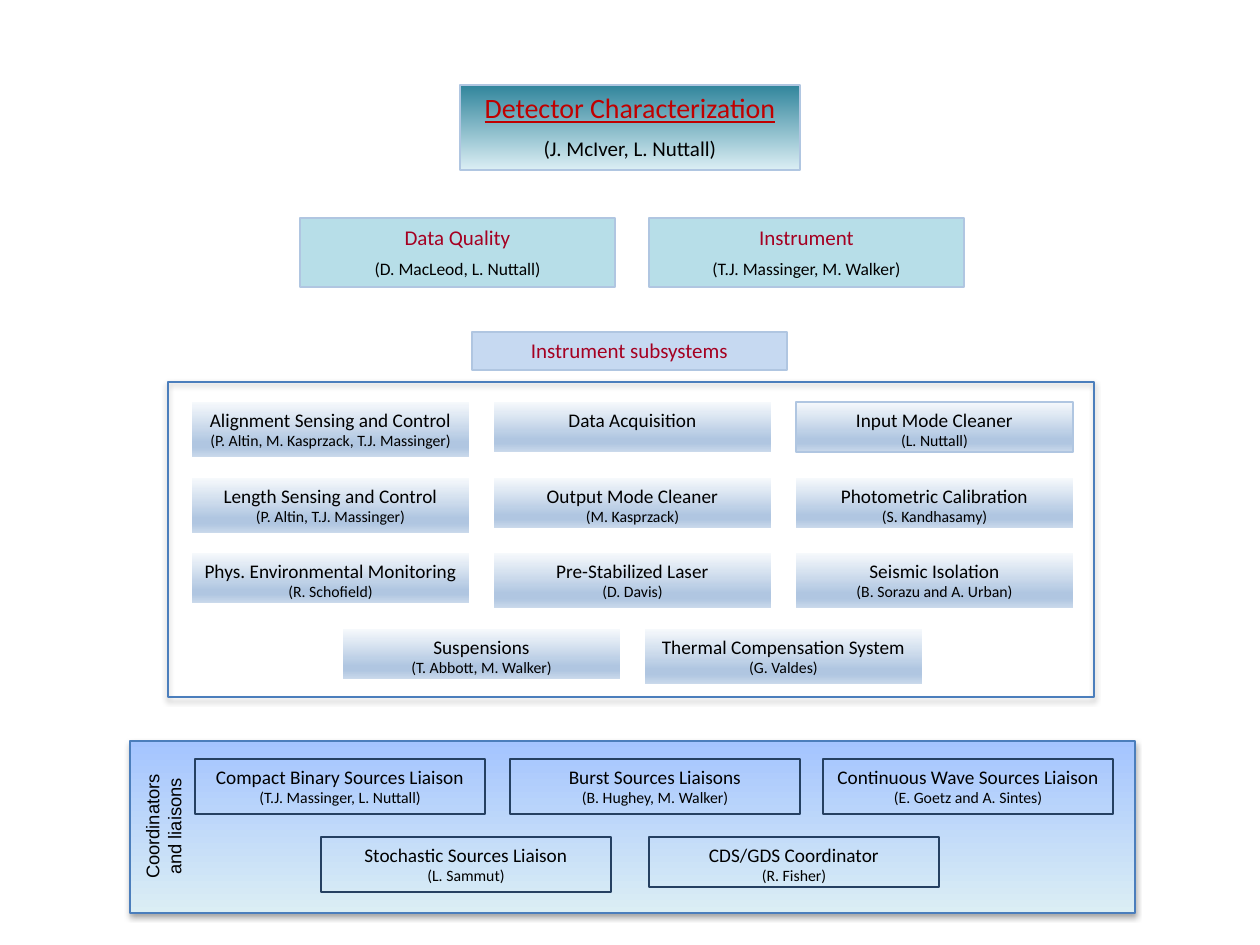
from lxml.etree import SubElement
from pptx import Presentation
from pptx.dml.color import RGBColor
from pptx.enum.shapes import MSO_SHAPE
from pptx.enum.text import MSO_ANCHOR, PP_ALIGN
from pptx.oxml.ns import qn
from pptx.util import Emu, Pt

EMU_PER_PX = 914400 / 126

COLORS = {
    "black": "000000",
    "title": "C00000",
    "heading": "A50021",
    "teal": "31859C",
    "pale_teal": "DBEEF4",
    "aqua": "B7DEE8",
    "lavender": "C6D9F1",
    "sky": "A4C4FF",
    "edge": "B0C6E1",
    "panel_edge": "4B7EBC",
    "navy": "254061",
    "mist": "F6F9FC",
    "haze": "CAD9EB",
}

# Gradient stops run from top to bottom: (percent, colour)
HEADER_FILL = [(0, "teal"), (100, "pale_teal")]
SUBSYSTEM_FILL = [(0, "mist"), (74, "edge"), (83, "edge"), (100, "haze")]
LIAISON_FILL = [(0, "sky"), (100, "pale_teal")]


def px(length):
    return Emu(round(length * EMU_PER_PX))


class OrgChart:
    def __init__(self, slide, font="Calibri"):
        self.slide = slide
        self.shapes = slide.shapes
        self.font = font

    def start_group(self):
        self.shapes = self.slide.shapes.add_group_shape().shapes

    def box(self, left, top, width, height, fill=None, line=None, weight=1):
        box = self.shapes.add_shape(
            MSO_SHAPE.RECTANGLE, px(left), px(top), px(width), px(height))
        box.shadow.inherit = False
        if isinstance(fill, list):
            self.gradient(box, fill)
        elif fill:
            box.fill.solid()
            box.fill.fore_color.rgb = RGBColor.from_string(COLORS[fill])
        else:
            box.fill.background()
        if line:
            box.line.color.rgb = RGBColor.from_string(COLORS[line])
            box.line.width = Pt(weight)
        else:
            box.line.fill.background()
        return box

    def gradient(self, box, stops):
        box.fill.gradient()
        box.fill.gradient_angle = 270
        stop_list = box._element.spPr.find(qn("a:gradFill")).find(qn("a:gsLst"))
        for old_stop in list(stop_list):
            stop_list.remove(old_stop)
        for percent, color in stops:
            stop = SubElement(stop_list, qn("a:gs"), pos=str(percent * 1000))
            SubElement(stop, qn("a:srgbClr"), val=COLORS[color])

    def panel(self, *bounds, **style):
        box = self.box(*bounds, line="panel_edge", **style)
        effects = box._element.spPr.find(qn("a:effectLst"))
        shadow = SubElement(effects, qn("a:outerShdw"), blurRad="40000",
                            dist="23000", dir="5400000", rotWithShape="0")
        color = SubElement(shadow, qn("a:srgbClr"), val=COLORS["black"])
        SubElement(color, qn("a:alpha"), val="35000")

    def set_lines(self, box, lines, sizes, colors, gap=0, font=None):
        frame = box.text_frame
        frame.text = "\n".join(lines)
        frame.word_wrap = True
        frame.vertical_anchor = MSO_ANCHOR.TOP
        frame.margin_left = frame.margin_right = px(6)
        frame.margin_top = frame.margin_bottom = px(6)
        for index, (para, size, color) in enumerate(
                zip(frame.paragraphs, sizes, colors)):
            para.alignment = PP_ALIGN.CENTER
            if index and gap:
                para.space_before = Pt(gap)
            for span in para.runs:
                span.font.name = font or self.font
                span.font.size = Pt(size)
                span.font.color.rgb = RGBColor.from_string(COLORS[color])

    def heading(self, bounds, lines, fill, sizes=(12, 10), color="heading", gap=5):
        box = self.box(*bounds, fill=fill, line="edge")
        self.set_lines(box, lines, sizes, (color, "black"), gap)
        return box

    def role(self, bounds, lines, **style):
        box = self.box(*bounds, **style)
        self.set_lines(box, lines, (11, 9), ("black", "black"))

    def side_label(self, left, top, width, height, lines):
        label = self.shapes.add_textbox(px(left), px(top), px(width), px(height))
        label.rotation = 270
        self.set_lines(label, lines, (10.5, 10.5), ("black", "black"), font="Arial")


SHORT, TALL = 50, 55

# Rows of the subsystem grid: left, top, then (height, lines) per box
SUBSYSTEM_ROWS = [
    (192, 402, [
        (TALL, ["Alignment Sensing and Control",
                "(P. Altin, M. Kasprzack, T.J. Massinger)"]),
        (SHORT, ["Data Acquisition"]),
        (SHORT, ["Input Mode Cleaner", "(L. Nuttall)"]),
    ]),
    (192, 478, [
        (TALL, ["Length Sensing and Control", "(P. Altin, T.J. Massinger)"]),
        (SHORT, ["Output Mode Cleaner", "(M. Kasprzack)"]),
        (SHORT, ["Photometric Calibration", "(S. Kandhasamy)"]),
    ]),
    (192, 553, [
        (SHORT, ["Phys. Environmental Monitoring", "(R. Schofield)"]),
        (TALL, ["Pre-Stabilized Laser", "(D. Davis)"]),
        (TALL, ["Seismic Isolation", "(B. Sorazu and A. Urban)"]),
    ]),
    (343, 629, [
        (SHORT, ["Suspensions", "(T. Abbott, M. Walker)"]),
        (TALL, ["Thermal Compensation System", "(G. Valdes)"]),
    ]),
]

LIAISONS = [
    (195, 759, TALL, ["Compact Binary Sources Liaison",
                      "(T.J. Massinger, L. Nuttall)"]),
    (510, 759, TALL, ["Burst Sources Liaisons", "(B. Hughey, M. Walker)"]),
    (823, 759, TALL, ["Continuous Wave Sources Liaison",
                      "(E. Goetz and A. Sintes)"]),
    (321, 837, TALL, ["Stochastic Sources Liaison", "(L. Sammut)"]),
    (649, 837, SHORT, ["CDS/GDS Coordinator", "(R. Fisher)"]),
]


def main():
    deck = Presentation()
    deck.slide_width, deck.slide_height = px(1260), px(945)
    chart = OrgChart(deck.slides.add_slide(deck.slide_layouts[6]))

    # Group lead and its two branches
    lead = chart.heading(
        (460, 85, 340, 85), ["Detector Characterization", "(J. McIver, L. Nuttall)"],
        HEADER_FILL, sizes=(16, 12), color="title", gap=6)
    lead.text_frame.paragraphs[0].runs[0].font.underline = True
    chart.heading((300, 218, 315, 69),
                  ["Data Quality", "(D. MacLeod, L. Nuttall)"], "aqua")
    chart.heading((649, 218, 315, 69),
                  ["Instrument", "(T.J. Massinger, M. Walker)"], "aqua")
    chart.heading((472, 332, 315, 38), ["Instrument subsystems"], "lavender")

    # Instrument subsystems
    chart.start_group()
    chart.panel(168, 382, 926, 315)
    for left, top, row in SUBSYSTEM_ROWS:
        for column, (height, lines) in enumerate(row):
            outline = "edge" if lines[0] == "Input Mode Cleaner" else None
            chart.role((left + column * 302, top, 277, height), lines,
                       fill=SUBSYSTEM_FILL, line=outline)

    # Coordinators and liaisons
    chart.start_group()
    chart.panel(130, 741, 1005, 172, fill=LIAISON_FILL, weight=0.75)
    for left, top, height, lines in LIAISONS:
        chart.role((left, top, 290, height), lines, line="navy")
    chart.side_label(77, 798, 173, 57, ["Coordinators", "and liaisons"])

    deck.save("out.pptx")


if __name__ == "__main__":
    main()
